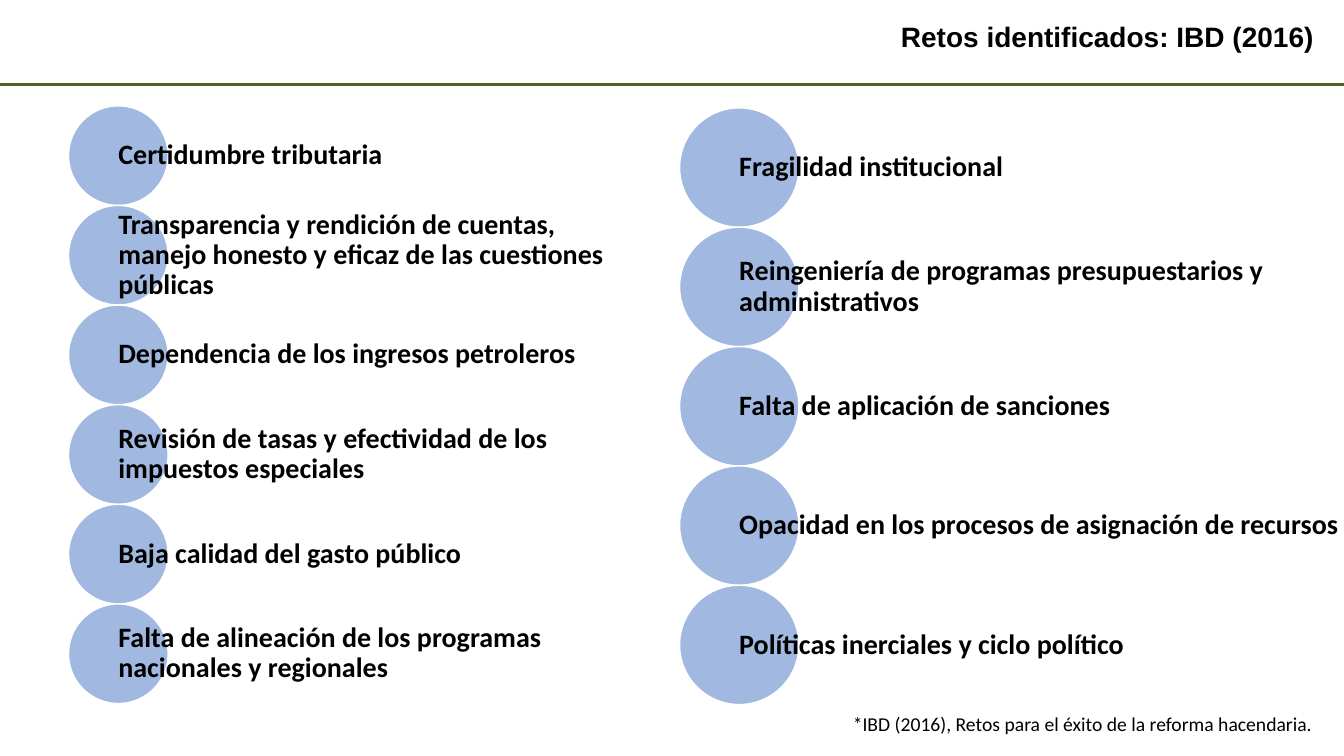
from lxml import etree
from pptx import Presentation
from pptx.dml.color import RGBColor
from pptx.enum.shapes import MSO_CONNECTOR, MSO_SHAPE
from pptx.enum.text import MSO_ANCHOR as Anchor, PP_ALIGN as Align
from pptx.oxml.ns import qn
from pptx.util import Inches, Pt

COLORS = {"text": "000000", "rule": "4F6228", "circle": "4472C4", "edge": "FFFFFF"}
WIDTH, HEIGHT = 13.33, 7.5

LEFT_CHALLENGES = [
    "Certidumbre tributaria",
    "Transparencia y rendición de cuentas, manejo honesto y eficaz de las cuestiones públicas",
    "Dependencia de los ingresos petroleros",
    "Revisión de tasas y efectividad de los impuestos especiales",
    "Baja calidad del gasto público",
    "Falta de alineación de los programas nacionales y regionales",
]
RIGHT_CHALLENGES = [
    "Fragilidad institucional",
    "Reingeniería de programas presupuestarios y administrativos",
    "Falta de aplicación de sanciones",
    "Opacidad en los procesos de asignación de recursos",
    "Políticas inerciales y ciclo político",
]


def color(name):
    return RGBColor.from_string(COLORS[name])


def add_text(page, text, area, size, font="Calibri", bold=True, align=Align.LEFT,
             anchor=Anchor.MIDDLE, insets=(0.1, 0.05), spacing=0.9):
    box = page.shapes.add_textbox(*map(Inches, area))
    frame = box.text_frame
    frame.word_wrap = True
    frame.vertical_anchor = anchor
    frame.margin_left = frame.margin_right = Inches(insets[0])
    frame.margin_top = frame.margin_bottom = Inches(insets[1])
    para = frame.paragraphs[0]
    para.text = text
    para.alignment = align
    para.line_spacing = spacing
    para.font.name, para.font.size, para.font.bold = font, Pt(size), bold
    para.font.color.rgb = color("text")


def add_rule(page, top):
    rule = page.shapes.add_connector(
        MSO_CONNECTOR.STRAIGHT, 0, Inches(top), Inches(WIDTH), Inches(top))
    rule.line.color.rgb = color("rule")
    rule.line.width = Pt(2)
    etree.SubElement(rule._element.spPr, qn("a:effectLst"))


def add_circle(page, left, top, diameter):
    circle = page.shapes.add_shape(
        MSO_SHAPE.OVAL, *map(Inches, (left, top, diameter, diameter)))
    circle.shadow.inherit = False
    circle.fill.solid()
    circle.fill.fore_color.rgb = color("circle")
    # Half-transparent fill
    fill_color = circle._element.spPr.find(qn("a:solidFill"))[0]
    etree.SubElement(fill_color, qn("a:alpha")).set("val", "50000")
    circle.line.color.rgb = color("edge")
    circle.line.width = Pt(1)


def add_challenges(page, challenges, left, top, bottom, right):
    """Stack touching circles; each text starts at its circle's centre."""
    diameter = (bottom - top) / len(challenges)
    text_left = left + diameter / 2
    for row, challenge in enumerate(challenges):
        row_top = top + row * diameter
        add_circle(page, left, row_top, diameter)
        add_text(page, challenge, (text_left, row_top, right - text_left, diameter),
                 20, insets=(0, 0.03))


def main():
    deck = Presentation()
    deck.slide_width, deck.slide_height = Inches(WIDTH), Inches(HEIGHT)
    page = deck.slides.add_slide(deck.slide_layouts[6])

    # Heading
    add_rule(page, 0.84)
    add_text(page, "Retos identificados: IBD (2016) ", (0.01, 0.05, 13.2, 0.67),
             20, font="Arial", align=Align.RIGHT)

    # Two columns of challenges
    add_challenges(page, LEFT_CHALLENGES, 0.68, 1.05, 6.98, 6.43)
    add_challenges(page, RIGHT_CHALLENGES, 6.74, 1.07, 6.99, WIDTH)

    # Source note
    add_text(page, "*IBD (2016), Retos para el éxito de la reforma hacendaria.",
             (8.36, 7.01, WIDTH - 8.36, 0.34), 14, bold=False,
             anchor=Anchor.TOP, spacing=1.0)

    deck.save("out.pptx")


if __name__ == "__main__":
    main()
